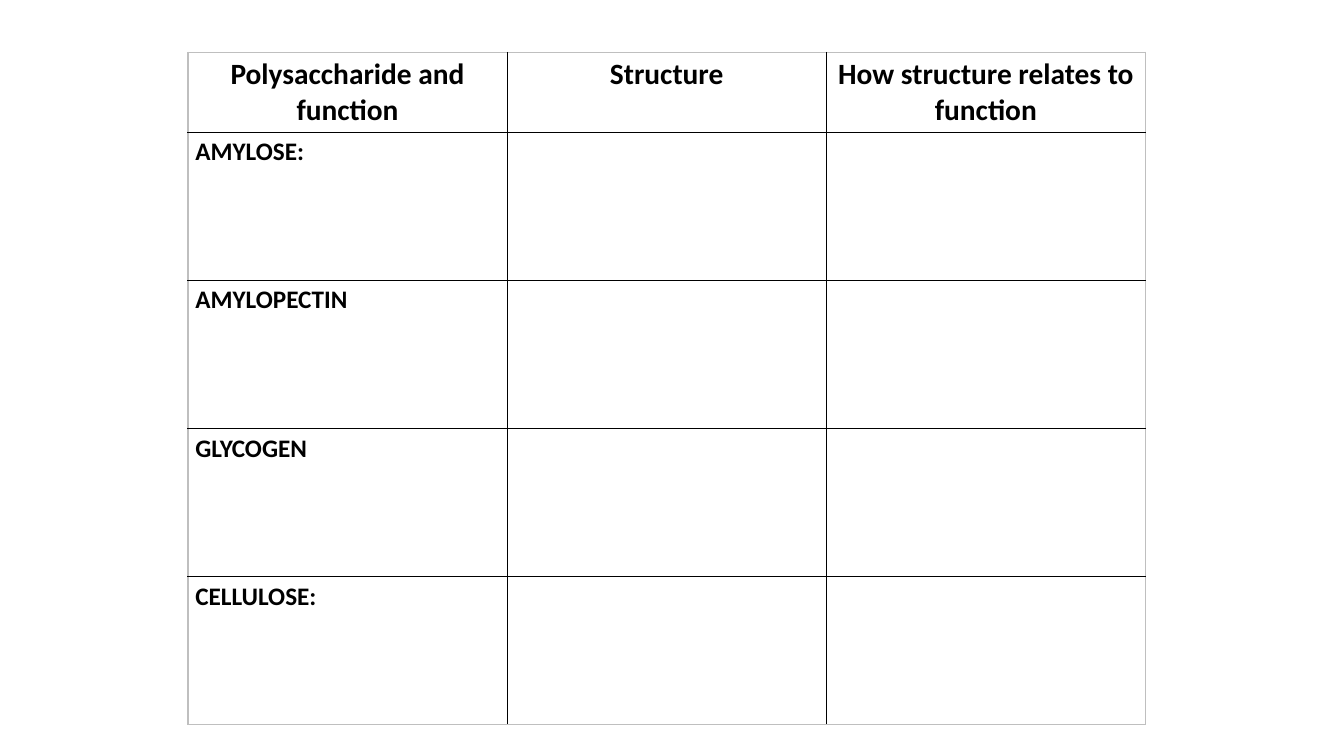
from dataclasses import dataclass

from lxml import etree
from pptx import Presentation
from pptx import util as u
from pptx.dml import color
from pptx.enum import text
from pptx.oxml import ns

EMU_PER_PX = 9525
HEADINGS = ("Polysaccharide and function", "Structure", "How structure relates to function")
POLYSACCHARIDES = ("AMYLOSE:", "AMYLOPECTIN", "GLYCOGEN", "CELLULOSE:")


@dataclass(frozen=True)
class Theme:
    font: str = "Calibri"
    ink: str = "000000"
    frame: str = "BFBFBF"
    heading_size: int = 21
    label_size: int = 18
    border_width: int = 1


THEME = Theme()


def px(length):
    return u.Emu(length * EMU_PER_PX)


def add_border(cell, side, colour):
    properties = cell._tc.get_or_add_tcPr()
    line = etree.SubElement(properties, ns.qn(f"a:ln{side}"), w=str(u.Pt(THEME.border_width)))
    fill = etree.SubElement(line, ns.qn("a:solidFill"))
    etree.SubElement(fill, ns.qn("a:srgbClr"), val=colour)


def style_cell(cell, outer_sides):
    cell.margin_left = cell.margin_right = px(7)
    cell.margin_top = cell.margin_bottom = px(4)
    for side in "LRTB":
        add_border(cell, side, THEME.frame if side in outer_sides else THEME.ink)
    cell.fill.background()


def write_cell(cell, wording, size, alignment):
    paragraph = cell.text_frame.paragraphs[0]
    paragraph.alignment = alignment
    run = paragraph.add_run()
    run.text = wording
    run.font.name = THEME.font
    run.font.size = u.Pt(size)
    run.font.bold = True
    run.font.color.rgb = color.RGBColor.from_string(THEME.ink)


def add_grid(slide, left, top, column_width, row_heights, column_count):
    row_count = len(row_heights)
    table = slide.shapes.add_table(
        row_count, column_count, px(left), px(top),
        px(column_width * column_count), px(sum(row_heights)),
    ).table
    table.first_row = table.horz_banding = False
    for column in table.columns:
        column.width = px(column_width)
    for row, height in zip(table.rows, row_heights):
        row.height = px(height)
    for row in range(row_count):
        for column in range(column_count):
            edges = {
                "L": column == 0,
                "R": column == column_count - 1,
                "T": row == 0,
                "B": row == row_count - 1,
            }
            style_cell(table.cell(row, column), [side for side in edges if edges[side]])
    return table


def main():
    presentation = Presentation()
    presentation.slide_width, presentation.slide_height = px(1280), px(720)
    slide = presentation.slides.add_slide(presentation.slide_layouts[6])
    row_heights = [76] + [141] * len(POLYSACCHARIDES)
    table = add_grid(slide, 179, 50, 304, row_heights, len(HEADINGS))
    for column, heading in enumerate(HEADINGS):
        write_cell(table.cell(0, column), heading, THEME.heading_size, text.PP_ALIGN.CENTER)
    for row, label in enumerate(POLYSACCHARIDES, start=1):
        write_cell(table.cell(row, 0), label, THEME.label_size, text.PP_ALIGN.LEFT)
    presentation.save("out.pptx")


if __name__ == "__main__":
    main()
